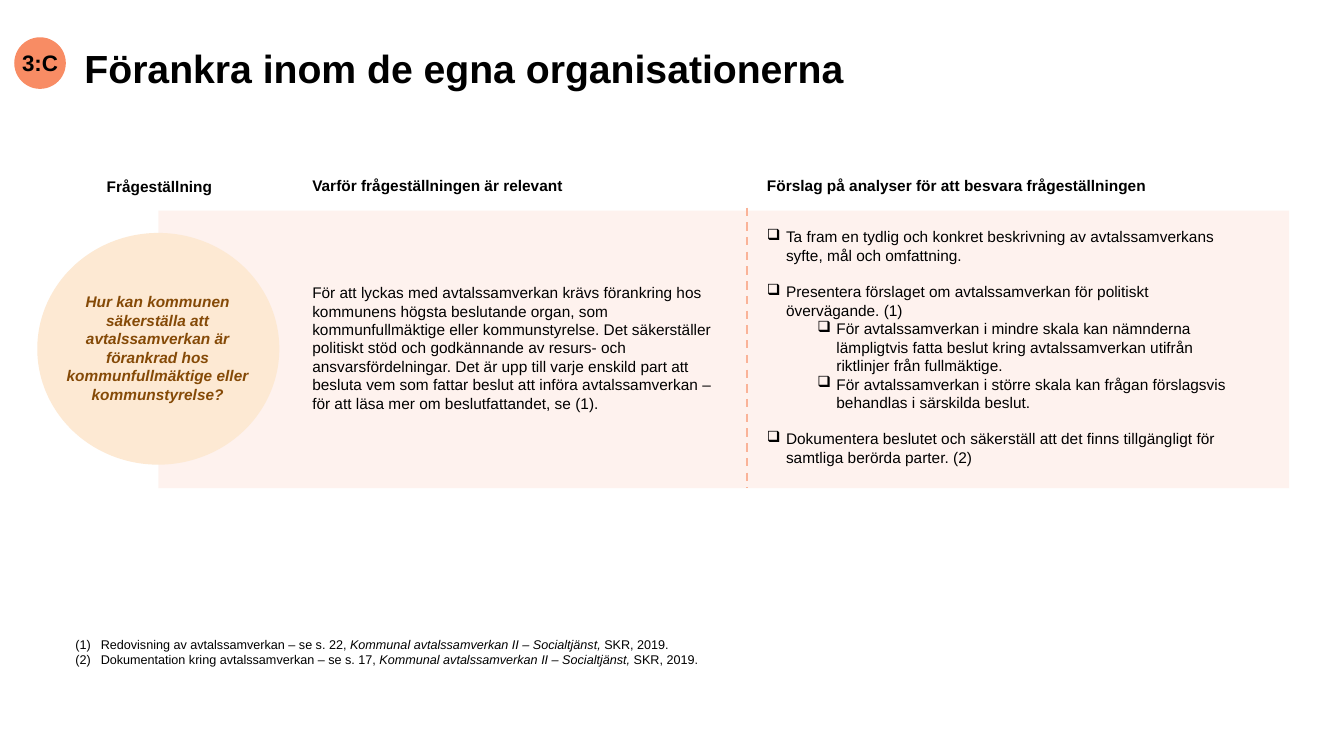
import pptx
import pptx.dml.color
import pptx.enum.dml
import pptx.enum.shapes
import pptx.enum.text
import pptx.util
from lxml import etree
from pptx.oxml.ns import qn

Cm = pptx.util.Cm
Pt = pptx.util.Pt
SHAPE = pptx.enum.shapes.MSO_SHAPE
ANCHOR = pptx.enum.text.MSO_ANCHOR
CENTER = pptx.enum.text.PP_ALIGN.CENTER

COLORS = {
    "text": "000000",
    "panel": "FDD9CB",
    "divider": "FAB398",
    "badge": "F88C64",
    "question_circle": "FDE9D3",
    "question": "854A07",
}
FONT = "Arial"
BODY_SIZE = 11
BODY_LINE = 12.65
HANGING = 0.48

HEADINGS = [
    (2.44, 4.34, 3.56, "Frågeställning"),
    (7.62, 4.32, 8.23, "Varför frågeställningen är relevant"),
    (19.08, 4.32, 11.07, "Förslag på analyser för att besvara frågeställningen"),
]
QUESTION = (
    "Hur kan kommunen säkerställa att avtalssamverkan är förankrad hos "
    "kommunfullmäktige eller kommunstyrelse?"
)
RELEVANCE = (
    "För att lyckas med avtalssamverkan krävs förankring hos kommunens högsta "
    "beslutande organ, som kommunfullmäktige eller kommunstyrelse. Det säkerställer "
    "politiskt stöd och godkännande av resurs- och ansvarsfördelningar. Det är upp "
    "till varje enskild part att besluta vem som fattar beslut att införa "
    "avtalssamverkan – för att läsa mer om beslutfattandet, se (1)."
)
ANALYSES = [
    (0, "Ta fram en tydlig och konkret beskrivning av avtalssamverkans syfte, mål "
        "och omfattning."),
    (0, "Presentera förslaget om avtalssamverkan för politiskt övervägande. (1)"),
    (1, "För avtalssamverkan i mindre skala kan nämnderna lämpligtvis fatta beslut "
        "kring avtalssamverkan utifrån riktlinjer från fullmäktige."),
    (1, "För avtalssamverkan i större skala kan frågan förslagsvis behandlas i "
        "särskilda beslut."),
    (0, "Dokumentera beslutet och säkerställ att det finns tillgängligt för samtliga "
        "berörda parter. (2)"),
]
FOOTNOTES = [
    "Redovisning av avtalssamverkan – se s. 22, ",
    "Dokumentation kring avtalssamverkan – se s. 17, ",
]
FOOTNOTE_TITLE = "Kommunal avtalssamverkan II – Socialtjänst, "
FOOTNOTE_END = "SKR, 2019."


def rgb(name):
    return pptx.dml.color.RGBColor.from_string(COLORS[name])


def style(paragraph, size=BODY_SIZE, color="text", bold=False, italic=None):
    font = paragraph.font
    font.name = FONT
    font.size = Pt(size)
    font.bold = bold
    font.italic = italic
    font.color.rgb = rgb(color)


def add_bullet(paragraph, tag, attributes, left, hanging):
    properties = paragraph._p.get_or_add_pPr()
    properties.set("marL", str(Cm(left)))
    properties.set("indent", str(-Cm(hanging)))
    etree.SubElement(properties, qn(tag), attributes)


def add_shape(slide, kind, left, top, width, height, color):
    shape = slide.shapes.add_shape(kind, Cm(left), Cm(top), Cm(width), Cm(height))
    shape.shadow.inherit = False
    shape.fill.solid()
    shape.fill.fore_color.rgb = rgb(color)
    shape.line.fill.background()
    return shape


def add_panel(slide):
    panel = add_shape(slide, SHAPE.RECTANGLE, 3.99, 5.31, 28.5, 6.99, "panel")
    fill_color = panel._element.spPr.find(qn("a:solidFill"))[0]
    etree.SubElement(fill_color, qn("a:alpha"), val="32000")


def add_divider(slide):
    divider = slide.shapes.add_connector(
        pptx.enum.shapes.MSO_CONNECTOR.STRAIGHT,
        Cm(18.82), Cm(5.23), Cm(18.82), Cm(12.29),
    )
    divider.line.color.rgb = rgb("divider")
    divider.line.width = Pt(1.5)
    divider.line.dash_style = pptx.enum.dml.MSO_LINE.DASH
    etree.SubElement(divider._element.spPr, qn("a:effectLst"))


def add_frame(slide, left, top, width, height):
    box = slide.shapes.add_textbox(Cm(left), Cm(top), Cm(width), Cm(height))
    box.text_frame.word_wrap = True
    return box.text_frame


def add_text(slide, left, top, width, height, text, **font):
    frame = add_frame(slide, left, top, width, height)
    paragraph = frame.paragraphs[0]
    paragraph.text = text
    style(paragraph, **font)
    return frame


def add_paragraph(frame, index):
    return frame.add_paragraph() if index else frame.paragraphs[0]


def add_badge(slide):
    badge = add_shape(slide, SHAPE.OVAL, 0.36, 0.94, 1.3, 1.3, "badge")
    frame = badge.text_frame
    frame.margin_left = frame.margin_right = 0
    frame.margin_top = frame.margin_bottom = 0
    frame.vertical_anchor = ANCHOR.MIDDLE
    frame.word_wrap = False
    paragraph = frame.paragraphs[0]
    paragraph.text = "3:C"
    paragraph.alignment = CENTER
    style(paragraph, size=16, bold=True)


def add_analyses(slide):
    frame = add_frame(slide, 19.08, 5.61, 12.12, 6.38)
    for index, (level, text) in enumerate(ANALYSES):
        paragraph = add_paragraph(frame, index)
        paragraph.text = text
        paragraph.level = level
        add_bullet(paragraph, "a:buChar", {"char": "❑"}, HANGING + 1.27 * level, HANGING)
        if index and level == 0:
            paragraph.space_before = Pt(BODY_LINE)
        style(paragraph)


def add_footnotes(slide):
    frame = add_frame(slide, 1.65, 15.93, 19.23, 1.02)
    for index, opening in enumerate(FOOTNOTES):
        paragraph = add_paragraph(frame, index)
        add_bullet(paragraph, "a:buAutoNum", {"type": "arabicParenBoth"}, 0.64, 0.64)
        style(paragraph, size=9)
        for text, italic in ((opening, False), (FOOTNOTE_TITLE, True), (FOOTNOTE_END, False)):
            run = paragraph.add_run()
            run.text = text
            run.font.italic = italic


def main():
    presentation = pptx.Presentation()
    presentation.slide_width = Cm(33.87)
    presentation.slide_height = Cm(19.05)
    slide = presentation.slides.add_slide(presentation.slide_layouts[6])

    add_panel(slide)
    add_divider(slide)
    for left, top, width, heading in HEADINGS:
        add_text(slide, left, top, width, 0.74, heading, bold=True)

    title = add_text(slide, 1.88, 1.02, 26.7, 1.5,
                     "Förankra inom de egna organisationerna", size=28, bold=True)
    title.vertical_anchor = ANCHOR.MIDDLE
    title.paragraphs[0].line_spacing = 0.95

    add_text(slide, 7.62, 7.01, 10.97, 3.56, RELEVANCE)
    add_analyses(slide)
    add_footnotes(slide)
    add_badge(slide)

    add_shape(slide, SHAPE.OVAL, 0.94, 5.87, 6.1, 5.84, "question_circle")
    question = add_text(slide, 1.17, 7.24, 5.61, 3.07, QUESTION,
                        color="question", bold=True, italic=True)
    question.paragraphs[0].alignment = CENTER

    presentation.save("out.pptx")


if __name__ == "__main__":
    main()
